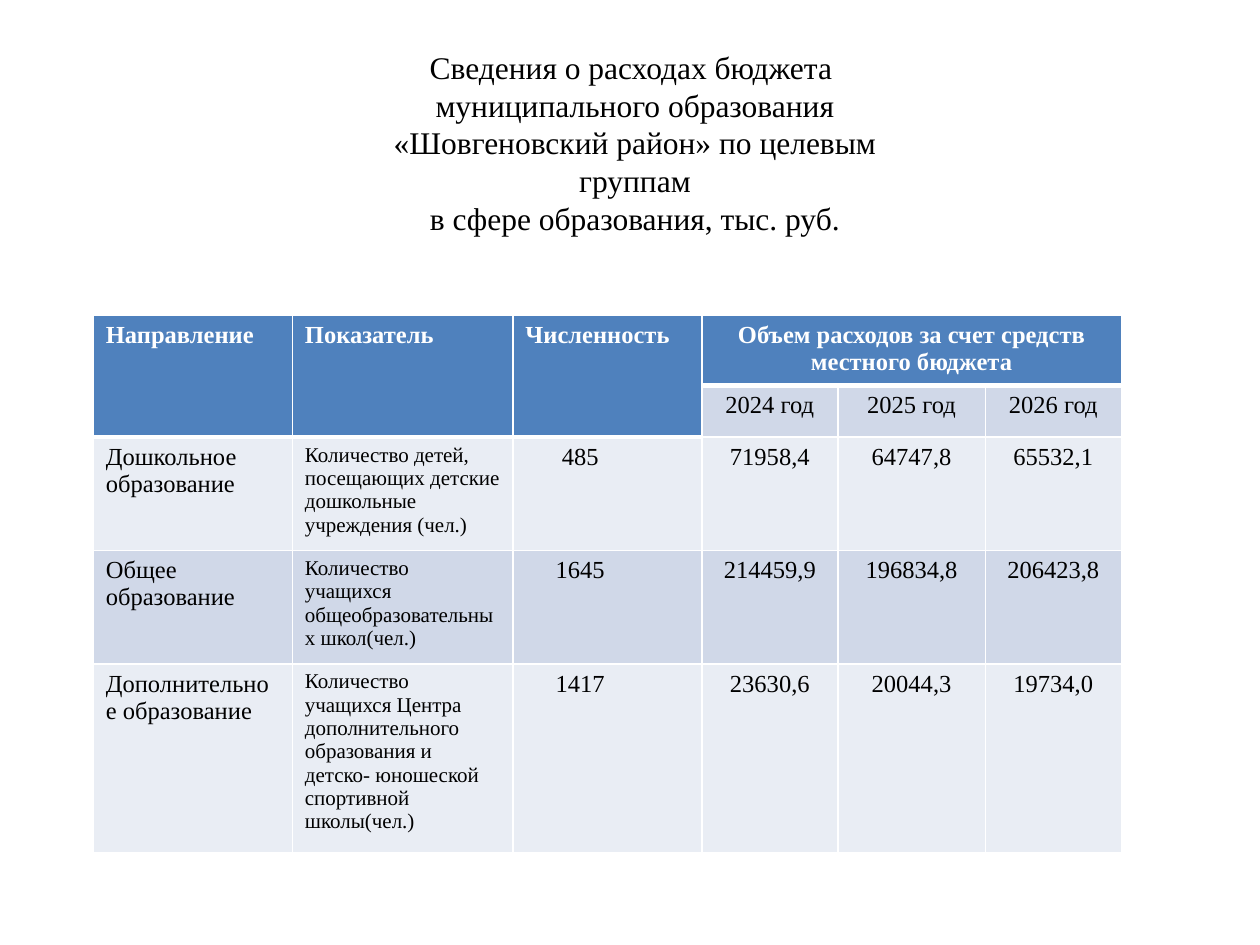
"""Build the slide on education spending by target group."""
from lxml import etree
from pptx import Presentation
from pptx.dml.color import RGBColor
from pptx.enum.text import MSO_ANCHOR, MSO_AUTO_SIZE, PP_ALIGN
from pptx.oxml.ns import qn
from pptx.util import Inches, Pt

TOP = MSO_ANCHOR.TOP
FIXED = MSO_AUTO_SIZE.NONE
LEFT, CENTER = PP_ALIGN.LEFT, PP_ALIGN.CENTER
FONT = "Times New Roman"
COLORS = {"head": "4F81BD", "dark": "D0D8E8", "light": "E9EDF4",
          "white": "FFFFFF", "black": "000000"}


def style(para, size, color, bold, align):
    para.alignment = align
    para.font.name = FONT
    para.font.size = Pt(size)
    para.font.bold = bold
    para.font.color.rgb = RGBColor.from_string(COLORS[color])


def border(cell, side, width):
    props = cell._tc.get_or_add_tcPr()
    line = etree.SubElement(props, qn(f"a:ln{side}"), w=str(Pt(width)))
    fill = etree.SubElement(line, qn("a:solidFill"))
    etree.SubElement(fill, qn("a:srgbClr"), val=COLORS["white"])


prs = Presentation()
prs.slide_width, prs.slide_height = Inches(10), Inches(7.5)
slide = prs.slides.add_slide(prs.slide_layouts[5])

title = slide.shapes.title
title.left, title.top = Inches(2.58), Inches(0.33)
title.width, title.height = Inches(4.92), Inches(1.92)
frame = title.text_frame
frame.word_wrap = True
frame.auto_size = FIXED
frame.vertical_anchor = TOP
para = frame.paragraphs[0]
para.text = ("Сведения о расходах бюджета \v"
             "муниципального образования «Шовгеновский район» по целевым группам\v"
             "в сфере образования, тыс. руб.")
style(para, 18, "black", False, CENTER)

rows = [
    ["Направление", "Показатель", "Численность",
     "Объем расходов за счет средств местного бюджета", "", ""],
    ["", "", "", "2024 год", "2025 год", "2026 год"],
    ["Дошкольное образование",
     "Количество детей, посещающих детские дошкольные учреждения (чел.)",
     "485", "71958,4", "64747,8", "65532,1"],
    ["Общее образование",
     "Количество учащихся общеобразовательных школ(чел.)",
     "1645", "214459,9", "196834,8", "206423,8"],
    ["Дополнительное образование",
     "Количество учащихся Центра дополнительного образования и "
     "детско- юношеской спортивной школы(чел.)",
     "1417", "23630,6", "20044,3", "19734,0"],
]
widths = [1.58, 1.75, 1.5, 1.08, 1.17, 1.08]
heights = [0.56, 0.41, 0.9, 0.9, 1.5]

table = slide.shapes.add_table(
    len(rows), len(widths), Inches(0.74), Inches(2.5),
    Inches(sum(widths)), Inches(sum(heights))).table
for col, width in zip(table.columns, widths):
    col.width = Inches(width)
for row, height in zip(table.rows, heights):
    row.height = Inches(height)
for c in range(3):
    table.cell(0, c).merge(table.cell(1, c))
table.cell(0, 3).merge(table.cell(0, 5))

for r, row in enumerate(rows):
    for c, text in enumerate(row):
        cell = table.cell(r, c)
        head = r == 0 or (r == 1 and c < 3)
        for side in "LR":
            border(cell, side, 1)
        if r == 0:
            border(cell, "T", 1)
        border(cell, "B", 3 if head else 1)
        shade = "head" if head else "dark" if r % 2 else "light"
        cell.fill.solid()
        cell.fill.fore_color.rgb = RGBColor.from_string(COLORS[shade])
        if not text:
            continue
        para = cell.text_frame.paragraphs[0]
        para.text = text
        align = CENTER if c > 2 or (c == 2 and not head) else LEFT
        size = 12 if c == 1 and not head else 14
        style(para, size, "white" if head else "black", head, align)
        if c == 2 and not head:
            cell.margin_right = Inches(0.53)

prs.save("out.pptx")
